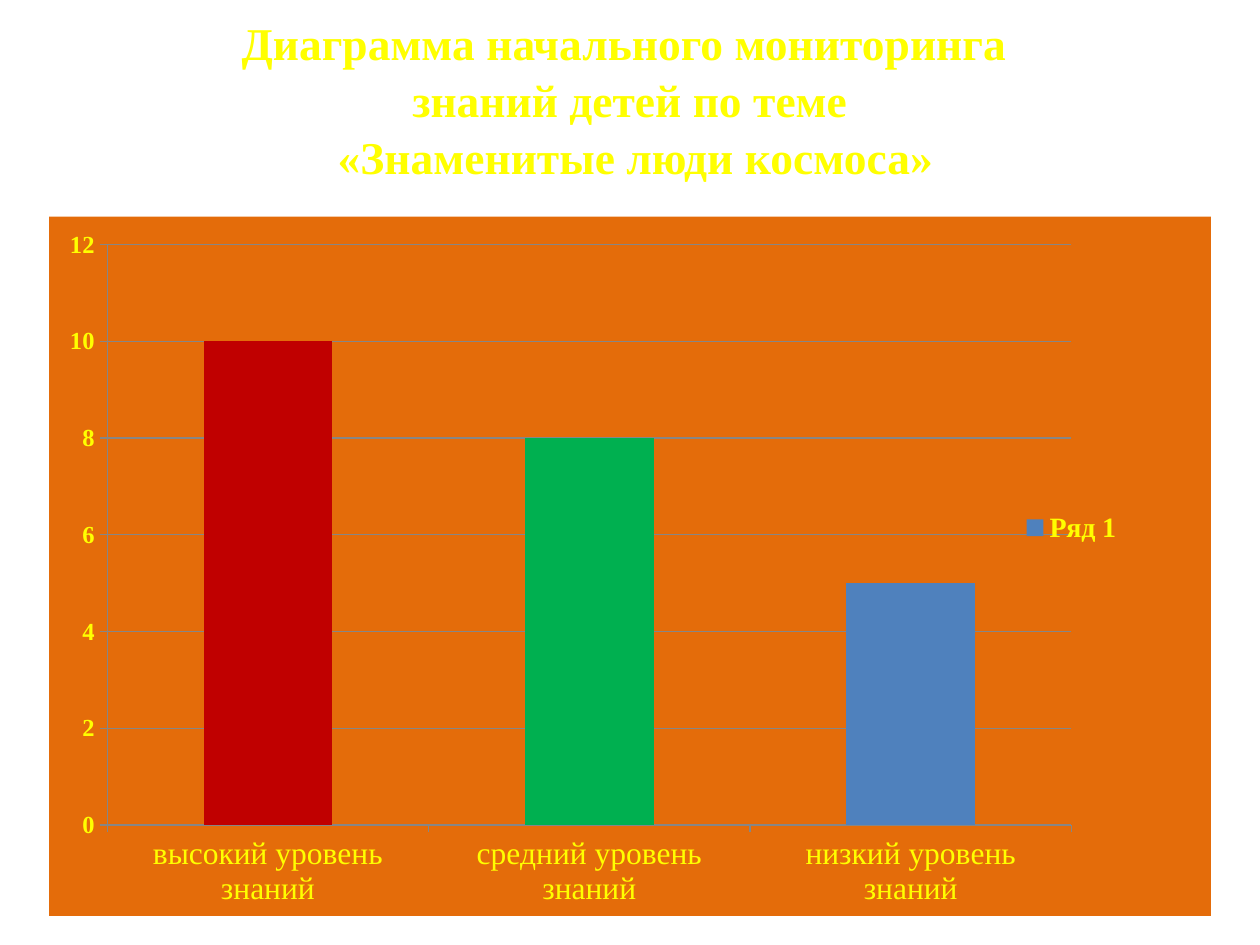
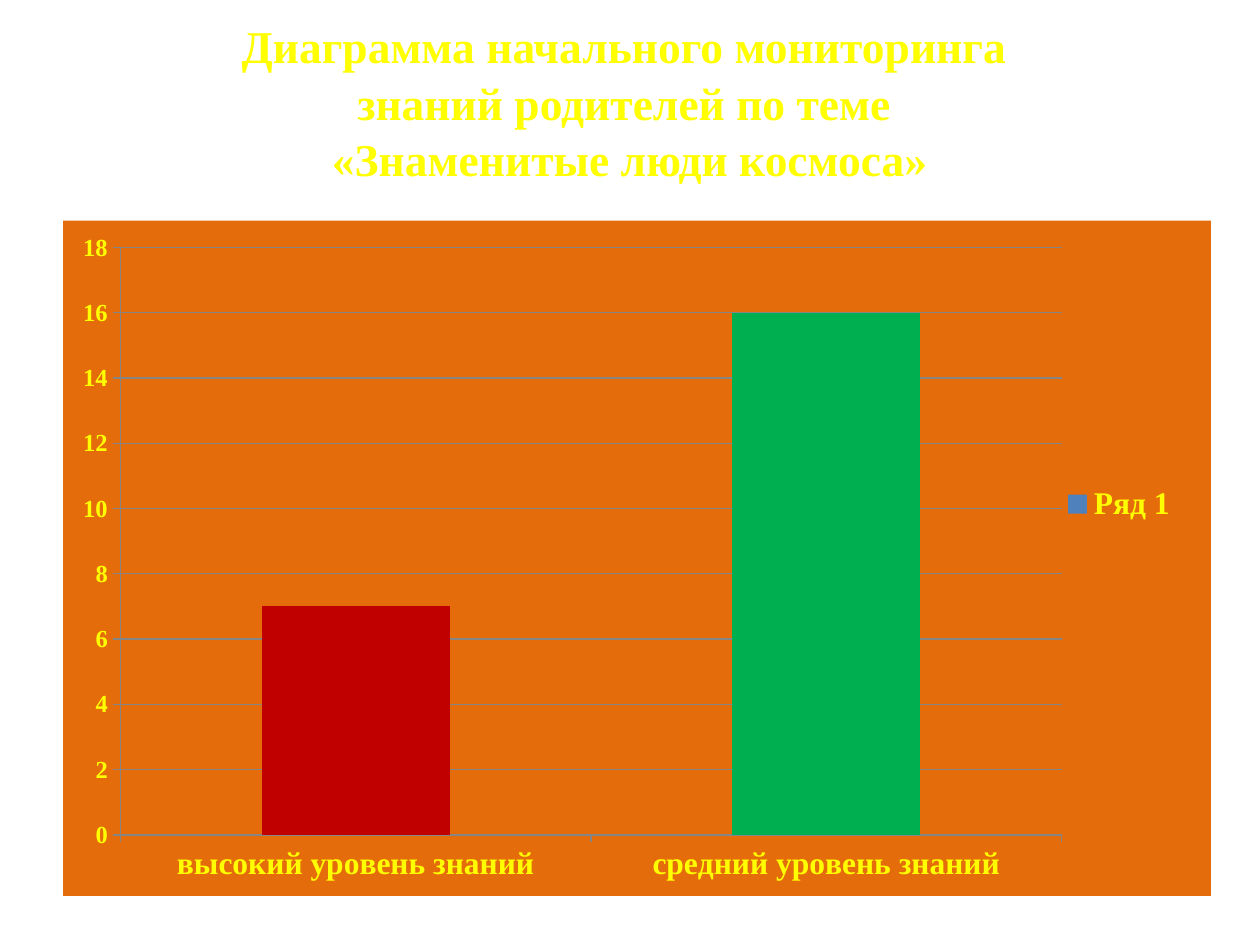
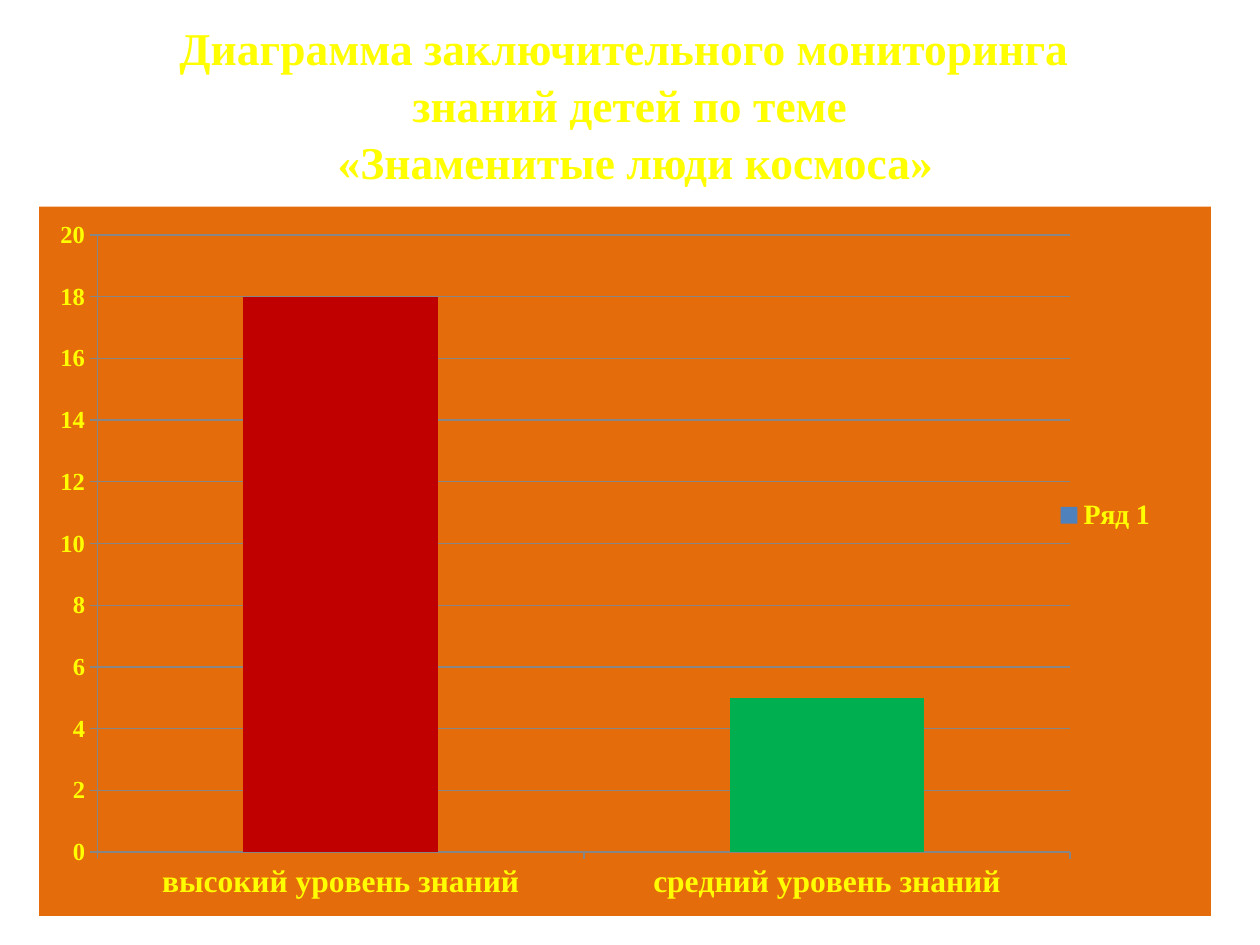
from dataclasses import dataclass

from lxml import etree
from pptx import Presentation
from pptx import util as u
from pptx.chart import data
from pptx.dml import color
from pptx.enum import chart as ch
from pptx.enum import text
from pptx.oxml import ns


@dataclass(frozen=True)
class Theme:
    face: str = "Times New Roman"
    base_face: str = "Calibri"
    lettering: str = "FFFF00"
    panel: str = "E46C0A"
    rule: str = "868686"
    series: str = "4F81BD"
    levels: tuple = ("C00000", "00B050")
    title_size: int = 26
    category_size: int = 18
    value_size: int = 14
    base_size: int = 10


THEME = Theme()
LEVELS = ("высокий уровень знаний", "средний уровень знаний", "низкий уровень знаний")

MONITORINGS = (
    dict(
        title="Диаграмма начального мониторинга \nзнаний детей по теме\n «Знаменитые люди космоса»",
        title_top=0.08, area=(0.39, 1.72, 9.22, 5.55), scores=(10, 8, 5), top_score=12,
        plot=(0.05, 0.04, 0.83, 0.83), legend=(0.82, 0.41, 0.12, 0.07),
        legend_size=16, bold_levels=False,
    ),
    dict(
        title="Диаграмма начального мониторинга \nзнаний родителей по теме \n«Знаменитые люди космоса»",
        title_top=0.1, area=(0.5, 1.75, 9.11, 5.36), scores=(7, 16), top_score=18,
        plot=(0.05, 0.04, 0.82, 0.87), legend=(0.86, 0.38, 0.12, 0.08),
        legend_size=18, bold_levels=True,
    ),
    dict(
        title="Диаграмма заключительного мониторинга \nзнаний детей по теме\n «Знаменитые люди космоса»",
        title_top=0.12, area=(0.31, 1.64, 9.3, 5.63), scores=(18, 5), top_score=20,
        plot=(0.05, 0.04, 0.83, 0.87), legend=(0.85, 0.4, 0.12, 0.07),
        legend_size=16, bold_levels=True,
    ),
)


def apply(target, **values):
    for key, value in values.items():
        setattr(target, key, value)


def style_font(font, size, bold=True):
    apply(font, name=THEME.face, size=u.Pt(size), bold=bold)
    font.color.rgb = color.RGBColor.from_string(THEME.lettering)


def paint(fill, shade):
    fill.solid()
    fill.fore_color.rgb = color.RGBColor.from_string(shade)


def draw_rule(line):
    line.width = u.Pt(0.75)
    line.color.rgb = color.RGBColor.from_string(THEME.rule)


def build_layout(fractions, inner=False):
    layout = etree.Element(ns.qn("c:layout"))
    manual = etree.SubElement(layout, ns.qn("c:manualLayout"))
    settings = [("layoutTarget", "inner")] if inner else []
    settings += [("xMode", "edge"), ("yMode", "edge")]
    settings += zip("xywh", map(str, fractions))
    for tag, value in settings:
        etree.SubElement(manual, ns.qn("c:" + tag)).set("val", value)
    return layout


def place_plot(chart, fractions):
    plot_area = chart._chartSpace.chart.plotArea
    for automatic in plot_area.findall(ns.qn("c:layout")):
        plot_area.remove(automatic)
    plot_area.insert(0, build_layout(fractions, inner=True))


def fill_panel(chart):
    panel = etree.Element(ns.qn("c:spPr"))
    solid = etree.SubElement(panel, ns.qn("a:solidFill"))
    etree.SubElement(solid, ns.qn("a:srgbClr")).set("val", THEME.panel)
    border = etree.SubElement(panel, ns.qn("a:ln"))
    etree.SubElement(border, ns.qn("a:noFill"))
    chart._chartSpace.chart.addnext(panel)


def add_title(slide, wording, top):
    box = slide.shapes.add_textbox(*map(u.Inches, (0.5, top, 9, 1.4)))
    frame = box.text_frame
    apply(frame, word_wrap=True, vertical_anchor=text.MSO_ANCHOR.MIDDLE)
    heading = frame.paragraphs[0]
    apply(heading, text=wording, alignment=text.PP_ALIGN.CENTER, line_spacing=1.04)
    for run in heading.runs:
        style_font(run.font, THEME.title_size)


def style_axes(chart, top_score, bold_levels):
    levels, scores = chart.category_axis, chart.value_axis
    apply(scores, minimum_scale=0, maximum_scale=top_score, major_unit=2,
          has_major_gridlines=True)
    draw_rule(scores.major_gridlines.format.line)
    for axis, size, bold in ((levels, THEME.category_size, bold_levels),
                             (scores, THEME.value_size, True)):
        axis.major_tick_mark = ch.XL_TICK_MARK.OUTSIDE
        draw_rule(axis.format.line)
        style_font(axis.tick_labels.font, size, bold)


def style_bars(chart):
    plot = chart.plots[0]
    apply(plot, gap_width=150, vary_by_categories=False)
    bars = plot.series[0]
    paint(bars.format.fill, THEME.series)
    for index, shade in enumerate(THEME.levels):
        paint(bars.points[index].format.fill, shade)


def add_legend(chart, fractions, size):
    chart.has_legend = True
    legend = chart.legend
    apply(legend, position=ch.XL_LEGEND_POSITION.RIGHT, include_in_layout=False)
    style_font(legend.font, size)
    overlay = legend._element.find(ns.qn("c:overlay"))
    overlay.addprevious(build_layout(fractions))


def add_score_chart(slide, monitoring):
    scores = monitoring["scores"]
    results = data.CategoryChartData(number_format="General")
    results.categories = LEVELS[:len(scores)]
    results.add_series("Ряд 1", scores)
    chart = slide.shapes.add_chart(
        ch.XL_CHART_TYPE.COLUMN_CLUSTERED, *map(u.Inches, monitoring["area"]), results
    ).chart
    chart.has_title = False
    apply(chart.font, name=THEME.base_face, size=u.Pt(THEME.base_size))
    fill_panel(chart)
    place_plot(chart, monitoring["plot"])
    style_axes(chart, monitoring["top_score"], monitoring["bold_levels"])
    style_bars(chart)
    add_legend(chart, monitoring["legend"], monitoring["legend_size"])


def main():
    deck = Presentation()
    apply(deck, slide_width=u.Inches(10), slide_height=u.Inches(7.5))
    for monitoring in MONITORINGS:
        slide = deck.slides.add_slide(deck.slide_layouts[6])
        add_title(slide, monitoring["title"], monitoring["title_top"])
        add_score_chart(slide, monitoring)
    deck.save("out.pptx")


if __name__ == "__main__":
    main()
